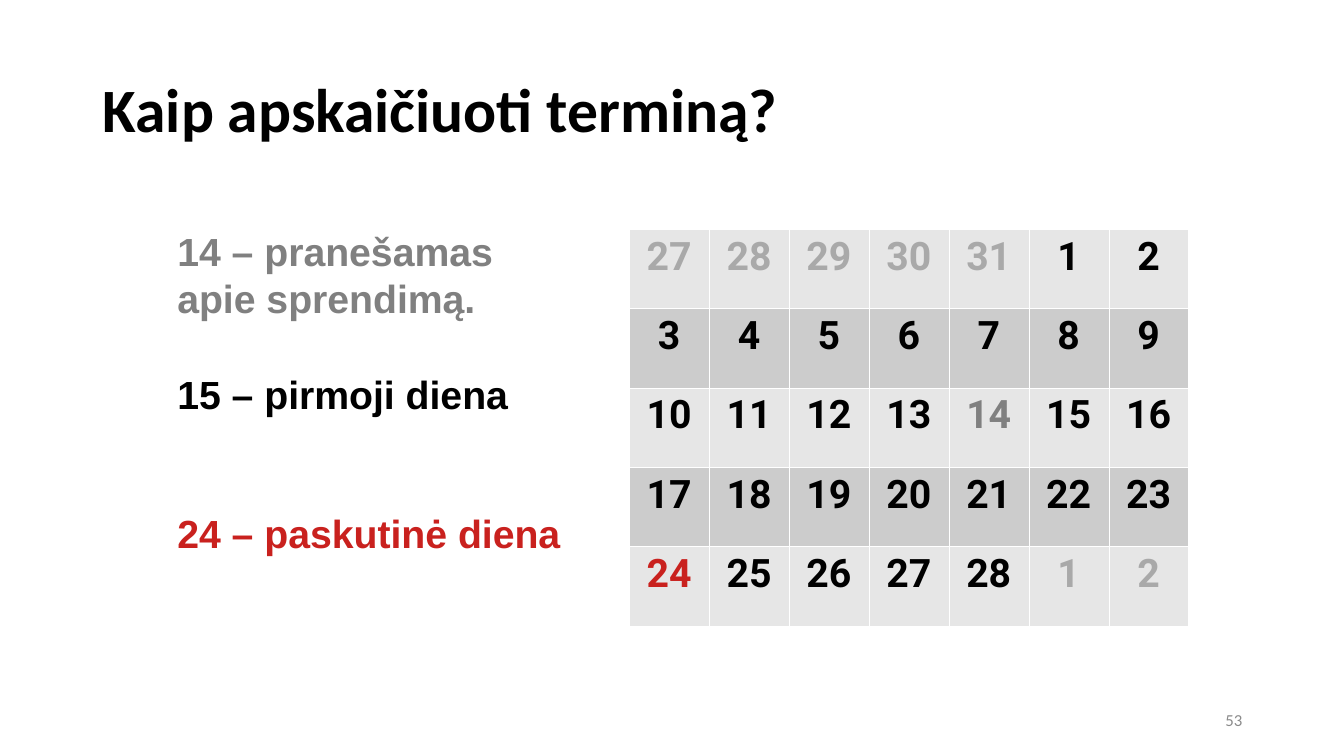
from pptx import Presentation
from pptx.dml.color import RGBColor
from pptx.enum.text import MSO_ANCHOR, MSO_AUTO_SIZE, PP_ALIGN
from pptx.oxml import parse_xml
from pptx.oxml.ns import nsdecls
from pptx.util import Inches, Pt

COLORS = {
    "black": "000000",
    "gray": "808080",
    "pale": "A9A9A9",
    "number": "8B8B8B",
    "red": "C9211E",
    "light_row": "E6E6E6",
    "dark_row": "CCCCCC",
    "border": "FFFFFF",
}
BORDER_WIDTH = Pt(0.06)


def write_text(frame, text, font="Arial", size=28, color="black", bold=True,
               align=PP_ALIGN.LEFT, spacing=None):
    para = frame.paragraphs[0]
    para.alignment = align
    if spacing:
        para.line_spacing = spacing
    span = para.add_run()
    span.text = text
    span.font.name = font
    span.font.size = Pt(size)
    span.font.bold = bold
    span.font.color.rgb = RGBColor.from_string(COLORS[color])


class SlideBuilder:
    def __init__(self, page):
        self.page = page

    def text(self, place, text, anchor=MSO_ANCHOR.TOP, grow=False, **style):
        box = self.page.shapes.add_textbox(*map(Inches, place))
        frame = box.text_frame
        frame.word_wrap = True
        frame.vertical_anchor = anchor
        frame.auto_size = MSO_AUTO_SIZE.SHAPE_TO_FIT_TEXT if grow else MSO_AUTO_SIZE.NONE
        write_text(frame, text, **style)

    def border(self, cell):
        properties = cell._tc.get_or_add_tcPr()
        for side in ("lnL", "lnR", "lnT", "lnB"):
            properties.append(parse_xml(
                f'<a:{side} {nsdecls("a")} w="{BORDER_WIDTH}"><a:solidFill>'
                f'<a:srgbClr val="{COLORS["border"]}"/></a:solidFill></a:{side}>'))

    def calendar(self, place, days, columns=7):
        rows = len(days) // columns
        table = self.page.shapes.add_table(rows, columns, *map(Inches, place)).table
        for index, (day, color) in enumerate(days):
            row, column = divmod(index, columns)
            cell = table.cell(row, column)
            self.border(cell)
            cell.fill.solid()
            fill = "dark_row" if row % 2 else "light_row"
            cell.fill.fore_color.rgb = RGBColor.from_string(COLORS[fill])
            write_text(cell.text_frame, str(day), font="Roboto", color=color,
                       align=PP_ALIGN.CENTER)


def main():
    deck = Presentation()
    deck.slide_width, deck.slide_height = Inches(13.33), Inches(7.5)
    builder = SlideBuilder(deck.slides.add_slide(deck.slide_layouts[6]))

    # Title and page number
    builder.text((0.92, 0.4, 11.5, 1.44), "Kaip apskaičiuoti terminą?",
                 anchor=MSO_ANCHOR.MIDDLE, font="Calibri", size=44, spacing=0.9)
    builder.text((9.42, 6.95, 3, 0.39), "53", anchor=MSO_ANCHOR.MIDDLE,
                 font="Calibri", size=12, color="number", bold=False,
                 align=PP_ALIGN.RIGHT)

    # Calendar: the month with the edges of its neighbours
    marked = {14: "gray", 24: "red"}
    days = [(day, "pale") for day in range(27, 32)]
    days += [(day, marked.get(day, "black")) for day in range(1, 29)]
    days += [(day, "pale") for day in (1, 2)]
    builder.calendar((6.24, 2.27, 5.55, 3.94), days)

    # Explanations of the marked days
    for top, height, text, color in (
        (2.21, 1.04, "14 – pranešamas apie sprendimą.", "gray"),
        (3.62, 0.57, "15 – pirmoji diena", "black"),
        (5, 0.57, "24 – paskutinė diena", "red"),
    ):
        builder.text((1.66, top, 4.05, height), text, grow=True, color=color)

    deck.save("out.pptx")


if __name__ == "__main__":
    main()
